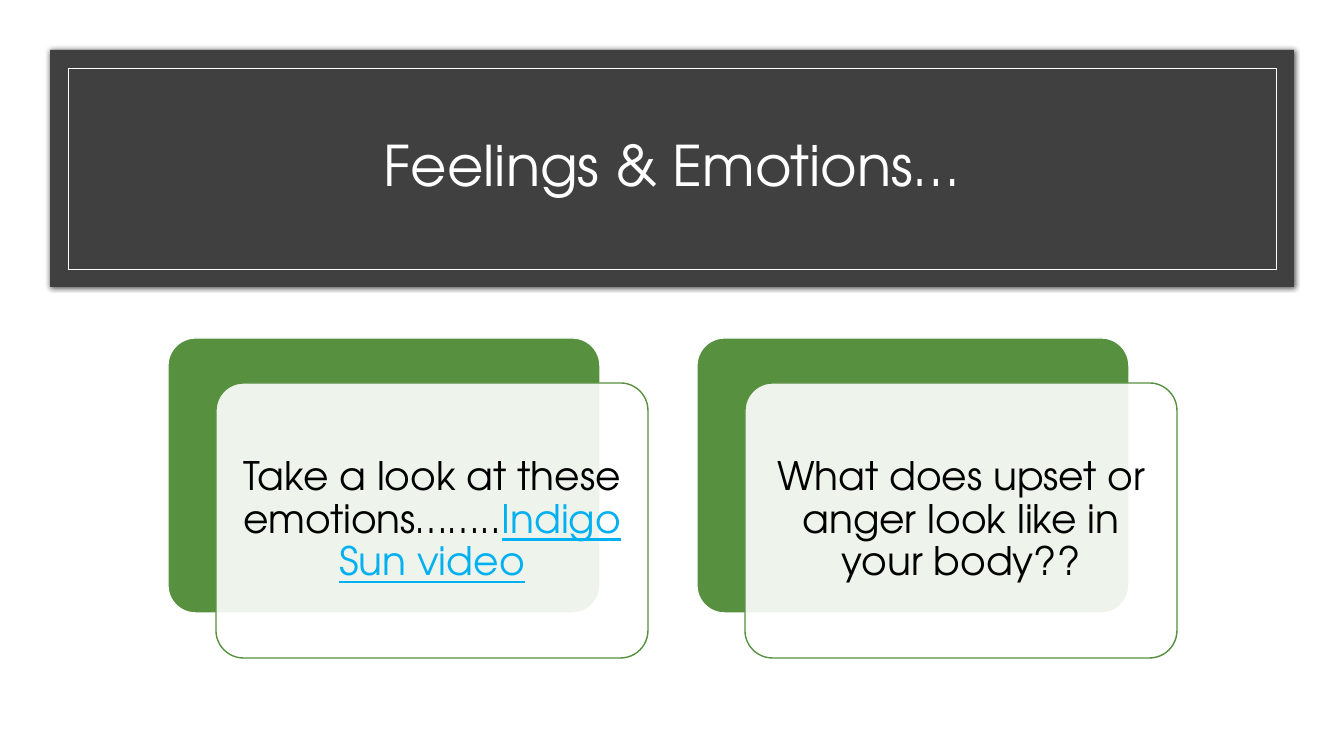
"""Builds the Feelings & Emotions slide with a title banner and two question cards."""
from lxml.etree import SubElement
from pptx import Presentation
from pptx.dml.color import RGBColor
from pptx.enum.shapes import MSO_SHAPE as Shape
from pptx.enum.text import MSO_ANCHOR as Anchor, MSO_AUTO_SIZE as AutoSize, PP_ALIGN as Align
from pptx.oxml.ns import qn
from pptx.util import Emu, Pt

WHITE = RGBColor(0xFF, 0xFF, 0xFF)
BLACK = RGBColor(0x00, 0x00, 0x00)
CHARCOAL = RGBColor(0x40, 0x40, 0x40)
GREEN = RGBColor(0x57, 0x90, 0x3F)
LINK_BLUE = RGBColor(0x00, 0xB0, 0xF0)

CARDS = [
    [("Take a look at these emotions……..", BLACK, False),
     ("Indigo Sun video", LINK_BLUE, True)],
    [("What does upset or anger look like in your body??", BLACK, False)],
]


class SlideBuilder:
    FONT = "TeX Gyre Adventor"
    TITLE_SIZE = Pt(40)
    CARD_SIZE = Pt(28)

    def __init__(self, deck):
        self.slide = deck.slides.add_slide(deck.slide_layouts[5])
        self.shapes = self.slide.shapes

    def px(self, *lengths):
        return [Emu(round(length * 914400 / 100.8)) for length in lengths]

    def panel(self, box, fill=None, line=None, weight=1, preset=Shape.RECTANGLE, alpha=None):
        panel = self.shapes.add_shape(preset, *self.px(*box))
        panel.shadow.inherit = False
        if preset == Shape.ROUNDED_RECTANGLE:
            panel.adjustments[0] = 0.1
        if fill is None:
            panel.fill.background()
        else:
            panel.fill.solid()
            panel.fill.fore_color.rgb = fill
        if line is None:
            panel.line.fill.background()
        else:
            panel.line.color.rgb = line
            panel.line.width = Pt(weight)
        if alpha is not None:
            tint = panel._element.spPr.find(qn("a:solidFill"))[0]
            SubElement(tint, qn("a:alpha"), val=str(alpha * 1000))
        return panel

    def glow_shadow(self, panel, blur, alpha):
        effects = panel._element.spPr.find(qn("a:effectLst"))
        outer = SubElement(effects, qn("a:outerShdw"), blurRad=str(int(Pt(blur))), dist="0",
                           dir="0", algn="ctr", rotWithShape="0")
        tint = SubElement(outer, qn("a:srgbClr"), val="000000")
        SubElement(tint, qn("a:alpha"), val=str(alpha * 1000))

    def add_text(self, frame, pieces, size):
        frame.word_wrap = True
        frame.auto_size = AutoSize.NONE
        frame.vertical_anchor = Anchor.MIDDLE
        paragraph = frame.paragraphs[0]
        paragraph.alignment = Align.CENTER
        paragraph.line_spacing = 0.9
        for words, color, underline in pieces:
            run = paragraph.add_run()
            run.text = words
            run.font.name = self.FONT
            run.font.size = size
            run.font.color.rgb = color
            run.font.underline = underline

    def title(self, box, words):
        heading = self.shapes.title
        heading.left, heading.top, heading.width, heading.height = self.px(*box)
        self.shapes._spTree.append(heading._element)
        self.add_text(heading.text_frame, [(words, WHITE, False)], self.TITLE_SIZE)

    def card(self, left, top, pieces):
        width, height = 432, 275
        front_left, front_top, pad = left + 48, top + 45, 8
        rounded = Shape.ROUNDED_RECTANGLE
        self.panel((left, top, width, height), GREEN, WHITE, preset=rounded)
        self.panel((front_left, front_top, width, height), WHITE, GREEN, preset=rounded, alpha=90)
        label = self.shapes.add_textbox(*self.px(
            front_left + pad, front_top + pad, width - 2 * pad, height - 2 * pad))
        frame = label.text_frame
        inset, = self.px(12)
        frame.margin_left = frame.margin_right = inset
        frame.margin_top = frame.margin_bottom = inset
        self.add_text(frame, pieces, self.CARD_SIZE)


def main():
    deck = Presentation()
    deck.slide_width, deck.slide_height = Emu(12192000), Emu(6858000)
    builder = SlideBuilder(deck)
    builder.panel((0, 0, 1344, 756), WHITE)
    banner = builder.panel((50, 50, 1244, 237), CHARCOAL)
    builder.glow_shadow(banner, blur=4, alpha=66)
    builder.panel((68, 68, 1208, 201), line=WHITE, weight=0.5)
    builder.title((117, 93, 1109, 151), "Feelings & Emotions…")
    for column, pieces in enumerate(CARDS):
        builder.card(168 + 529 * column, 338, pieces)
    deck.save("out.pptx")


if __name__ == "__main__":
    main()
